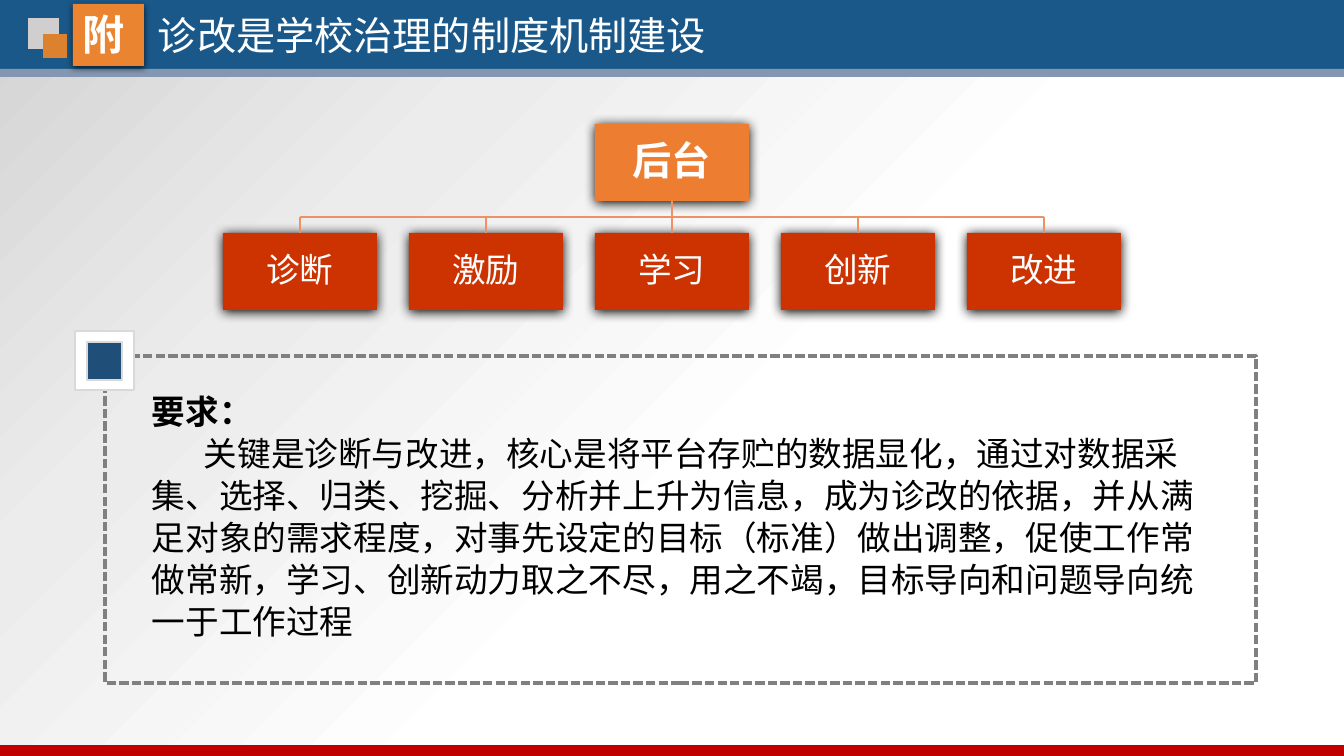
import pptx
import pptx.dml.color
import pptx.enum.dml
import pptx.enum.shapes
import pptx.enum.text
import pptx.oxml.ns
import pptx.util
from copy import deepcopy
from lxml import etree

EMU_PER_PX = 914400 / 100.8
SLIDE_WIDTH, SLIDE_HEIGHT = 1344, 756
FONT = "Noto Sans CJK SC"
WHITE, BLACK = "FFFFFF", "000000"
ALIGN = pptx.enum.text.PP_ALIGN
ANCHOR = pptx.enum.text.MSO_ANCHOR
qn = pptx.oxml.ns.qn

BODY_TEXT = (
    "关键是诊断与改进，核心是将平台存贮的数据显化，通过对数据采集、选择、归类、挖掘、"
    "分析并上升为信息，成为诊改的依据，并从满足对象的需求程度，对事先设定的目标（标准）"
    "做出调整，促使工作常做常新，学习、创新动力取之不尽，用之不竭，目标导向和问题导向"
    "统一于工作过程"
)


def px(length):
    return pptx.util.Emu(round(length * EMU_PER_PX))


def color(hex_string):
    return pptx.dml.color.RGBColor.from_string(hex_string)


def add_text(paragraph, text, size=24, bold=False, fill=WHITE, align=ALIGN.LEFT,
             line_spacing=1.0):
    paragraph.alignment = align
    paragraph.line_spacing = line_spacing
    paragraph.space_before = pptx.util.Pt(0)
    run = paragraph.add_run()
    run.text = text
    run.font.size = pptx.util.Pt(size)
    run.font.bold = bold
    run.font.name = FONT
    run.font.color.rgb = color(fill)
    east_asian = etree.SubElement(run.font._element, qn("a:ea"))
    east_asian.set("typeface", FONT)


def set_frame(frame, inset_x=10, inset_y=5, anchor=ANCHOR.TOP):
    frame.word_wrap = True
    frame.auto_size = pptx.enum.text.MSO_AUTO_SIZE.NONE
    frame.vertical_anchor = anchor
    frame.margin_left = frame.margin_right = px(inset_x)
    frame.margin_top = frame.margin_bottom = px(inset_y)


def place(shape, left, top, width, height):
    shape.left, shape.top = px(left), px(top)
    shape.width, shape.height = px(width), px(height)


def add_box(slide, left, top, width, height, fill=None, line=None, line_width=1):
    shape = slide.shapes.add_shape(pptx.enum.shapes.MSO_SHAPE.RECTANGLE,
                                   px(left), px(top), px(width), px(height))
    shape.shadow.inherit = False
    if fill:
        shape.fill.solid()
        shape.fill.fore_color.rgb = color(fill)
    else:
        shape.fill.background()
    if line:
        shape.line.color.rgb = color(line)
        shape.line.width = pptx.util.Pt(line_width)
    else:
        shape.line.fill.background()
    return shape


def add_shadow(shape, blur, distance, opacity):
    effects = shape.element.spPr.find(qn("a:effectLst"))
    shadow = etree.SubElement(effects, qn("a:outerShdw"), dir="5400000", rotWithShape="0",
                              blurRad=str(pptx.util.Pt(blur)), dist=str(pptx.util.Pt(distance)))
    tint = etree.SubElement(shadow, qn("a:srgbClr"), val=BLACK)
    etree.SubElement(tint, qn("a:alpha"), val=str(opacity * 1000))


def add_node(slide, left, top, text, fill, size=24, bold=False):
    node = add_box(slide, left, top, 154, 77, fill)
    add_shadow(node, 8.5, 1, 100)
    set_frame(node.text_frame, 3, 3, ANCHOR.MIDDLE)
    add_text(node.text_frame.paragraphs[0], text, size=size, bold=bold,
             align=ALIGN.CENTER, line_spacing=0.9)
    return node


def add_line(slide, x1, y1, x2, y2, start=None, end=None):
    connector = slide.shapes.add_connector(pptx.enum.shapes.MSO_CONNECTOR.STRAIGHT,
                                           px(x1), px(y1), px(x2), px(y2))
    connector.line.color.rgb = color("EF9166")
    connector.line.width = pptx.util.Pt(1)
    etree.SubElement(connector.element.spPr, qn("a:effectLst"))
    if start:
        start_shape, start_side = start
        connector.begin_connect(start_shape, start_side)
    if end:
        end_shape, end_side = end
        connector.end_connect(end_shape, end_side)


def set_background(slide):
    fill = slide.background.fill
    fill.gradient()
    fill.gradient_angle = 315
    stop_list = fill.gradient_stops[0]._gs.getparent()
    stop_list.append(deepcopy(stop_list[0]))
    for stop, (position, shade) in zip(fill.gradient_stops,
                                       [(0, "D3D3D3"), (0.27, "ECECEC"), (0.57, WHITE)]):
        stop.position = position
        stop.color.rgb = color(shade)


def add_tree(slide):
    center, step, bus, child_top = 672, 186, 217, 233
    root = add_node(slide, center - 77, 124, "后台", "ED7D31", size=28, bold=True)
    for index, label in enumerate(["诊断", "激励", "学习", "创新", "改进"]):
        middle = center + (index - 2) * step
        child = add_node(slide, middle - 77, child_top, label, "CC3300")
        if middle == center:
            add_line(slide, middle, 201, middle, child_top, start=(root, 2), end=(child, 0))
        else:
            add_line(slide, middle, bus, middle, child_top, end=(child, 0))
    add_line(slide, center - 2 * step, bus, center + 2 * step, bus)


def add_requirements(slide):
    body = slide.placeholders[1]
    place(body, 142, 386, 1075, 303)
    set_frame(body.text_frame)
    heading = body.text_frame.paragraphs[0]
    detail = body.text_frame.add_paragraph()
    add_text(heading, "要求：", bold=True, fill=BLACK)
    add_text(detail, BODY_TEXT, fill=BLACK, line_spacing=pptx.util.Pt(30))
    for paragraph, indent in [(heading, 0), (detail, 52)]:
        properties = paragraph._p.get_or_add_pPr()
        properties.set("marL", "0")
        properties.set("indent", str(px(indent)))
        etree.SubElement(properties, qn("a:buNone"))

    # Dashed frame with its corner marker
    frame = add_box(slide, 105, 356, 1151, 327, line="808080", line_width=2.25)
    frame.line.dash_style = pptx.enum.dml.MSO_LINE.SQUARE_DOT
    add_box(slide, 75, 331, 59, 59, WHITE, line="D9D9D9")
    add_box(slide, 87, 342, 35, 38, "1F4E79", line="D9D9D9")


def add_header(slide):
    add_box(slide, 0, 0, SLIDE_WIDTH, 77, "1A5889")
    add_box(slide, 0, 69, SLIDE_WIDTH, 8, "8497B0")
    add_box(slide, 28, 18, 31, 31, "D0CECE")
    add_box(slide, 43, 34, 24, 24, "DC822E")

    # The title goes in front of the band
    title = slide.shapes.title
    slide.shapes.element.append(title.element)
    place(title, 142, 6, 580, 66)
    set_frame(title.text_frame)
    add_text(title.text_frame.paragraphs[0], "诊改是学校治理的制度机制建设",
             size=28, align=ALIGN.CENTER)

    badge = add_box(slide, 73, 4, 71, 62, "EA8431")
    add_shadow(badge, 4.5, 1.5, 63)
    set_frame(badge.text_frame)
    add_text(badge.text_frame.paragraphs[0], "附", size=30, bold=True)


def main():
    presentation = pptx.Presentation()
    presentation.slide_width = px(SLIDE_WIDTH)
    presentation.slide_height = px(SLIDE_HEIGHT)
    slide = presentation.slides.add_slide(presentation.slide_layouts[1])
    set_background(slide)
    add_tree(slide)
    add_requirements(slide)
    add_header(slide)
    # Footer strip
    add_box(slide, 0, 745, SLIDE_WIDTH, 11, "C00000")
    presentation.save("out.pptx")


if __name__ == "__main__":
    main()
